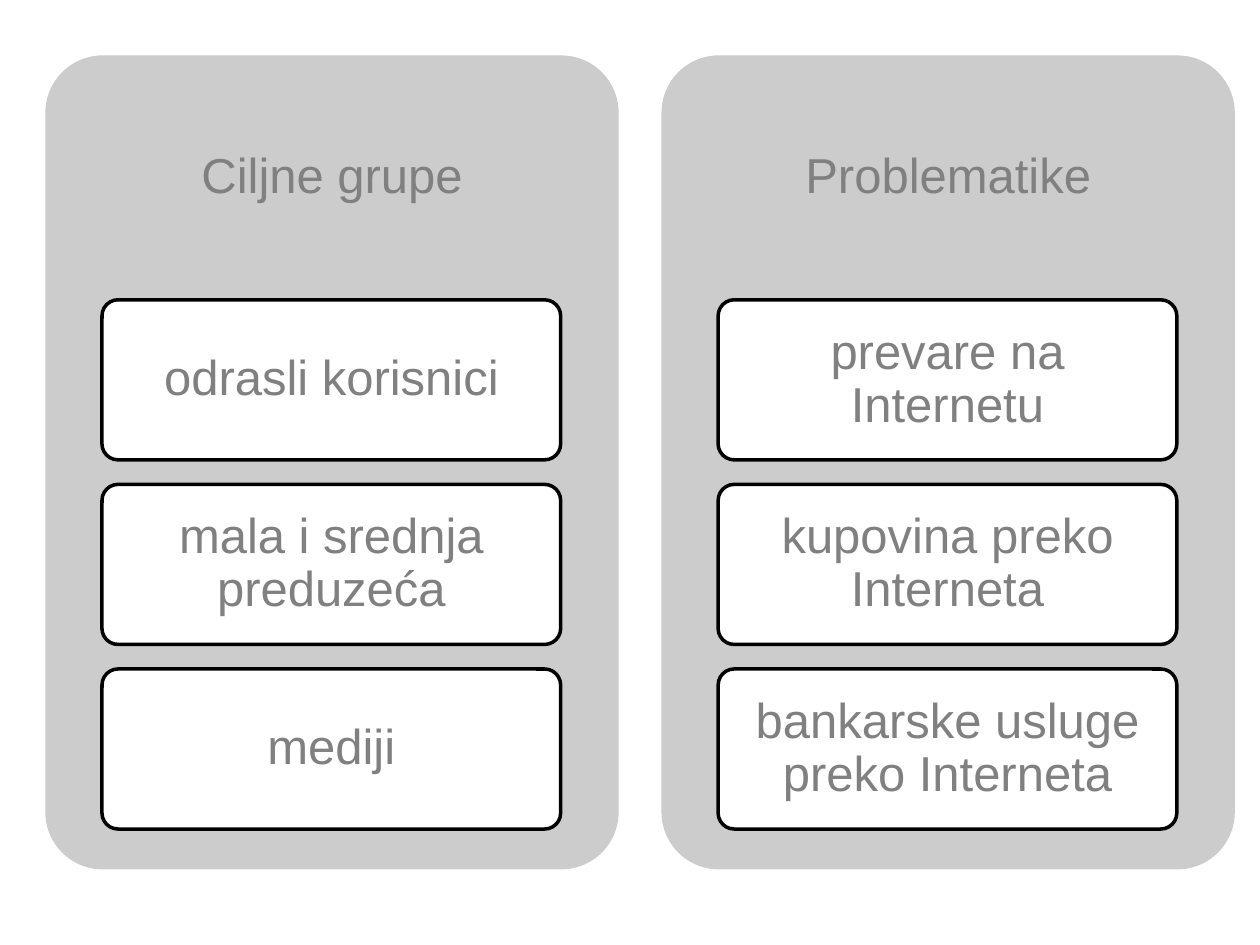
from dataclasses import dataclass

import pptx
import pptx.dml.color
import pptx.enum.shapes
import pptx.enum.text
import pptx.util

Inches = pptx.util.Inches
RGBColor = pptx.dml.color.RGBColor

GREY = RGBColor(0x80, 0x80, 0x80)
SILVER = RGBColor(0xCC, 0xCC, 0xCC)
WHITE = RGBColor(0xFF, 0xFF, 0xFF)
BLACK = RGBColor(0, 0, 0)

LEFT, TOP = 0.36, 0.44
WIDTH, HEIGHT = 4.55, 6.46
STEP = 4.89
HEAD = 1.94
INDENT = 0.45
CARD_WIDTH, CARD_HEIGHT = 3.64, 1.27
CARD_STEP = 1.465


@dataclass
class Panel:
    title: str
    cards: list[str]


PANELS = [
    Panel("Ciljne grupe",
          ["odrasli korisnici", "mala i srednja preduzeća", "mediji"]),
    Panel("Problematike",
          ["prevare na Internetu", "kupovina preko Interneta",
           "bankarske usluge preko Interneta"]),
]


def write(shape, text: str, *, side: float, edge: float,
          size: int = 28, color: RGBColor = GREY) -> None:
    """Centre text in a shape, with side and edge as its margins in inches."""
    frame = shape.text_frame
    frame.word_wrap = True
    frame.vertical_anchor = pptx.enum.text.MSO_ANCHOR.MIDDLE
    frame.margin_left = frame.margin_right = Inches(side)
    frame.margin_top = frame.margin_bottom = Inches(edge)
    line = frame.paragraphs[0]
    line.text = text
    line.alignment = pptx.enum.text.PP_ALIGN.CENTER
    line.line_spacing = 0.9
    line.font.name = "Arial"
    line.font.size = pptx.util.Pt(size)
    line.font.color.rgb = color


def add_box(slide, x: float, y: float, width: float, height: float,
            fill: RGBColor, border: RGBColor | None = None):
    box = slide.shapes.add_shape(
        pptx.enum.shapes.MSO_SHAPE.ROUNDED_RECTANGLE,
        Inches(x), Inches(y), Inches(width), Inches(height))
    box.adjustments[0] = 0.1
    box.shadow.inherit = False
    box.fill.solid()
    box.fill.fore_color.rgb = fill
    if border is None:
        box.line.fill.background()
    else:
        box.line.color.rgb = border
        box.line.width = pptx.util.Pt(2)
    return box


def add_panel(slide, panel: Panel, x: float) -> None:
    add_box(slide, x, TOP, WIDTH, HEIGHT, SILVER)
    head = slide.shapes.add_textbox(
        Inches(x), Inches(TOP), Inches(WIDTH), Inches(HEAD))
    write(head, panel.title, side=0.12, edge=0.12)
    for row, text in enumerate(panel.cards):
        card = add_box(slide, x + INDENT, TOP + HEAD + row * CARD_STEP,
                       CARD_WIDTH, CARD_HEIGHT, WHITE, BLACK)
        write(card, text, side=0.08, edge=0.06)


def main() -> None:
    deck = pptx.Presentation()
    deck.slide_width, deck.slide_height = Inches(10), Inches(7.5)
    slide = deck.slides.add_slide(deck.slide_layouts.get_by_name("Blank"))
    for column, panel in enumerate(PANELS):
        add_panel(slide, panel, LEFT + column * STEP)
    deck.save("out.pptx")


if __name__ == "__main__":
    main()
